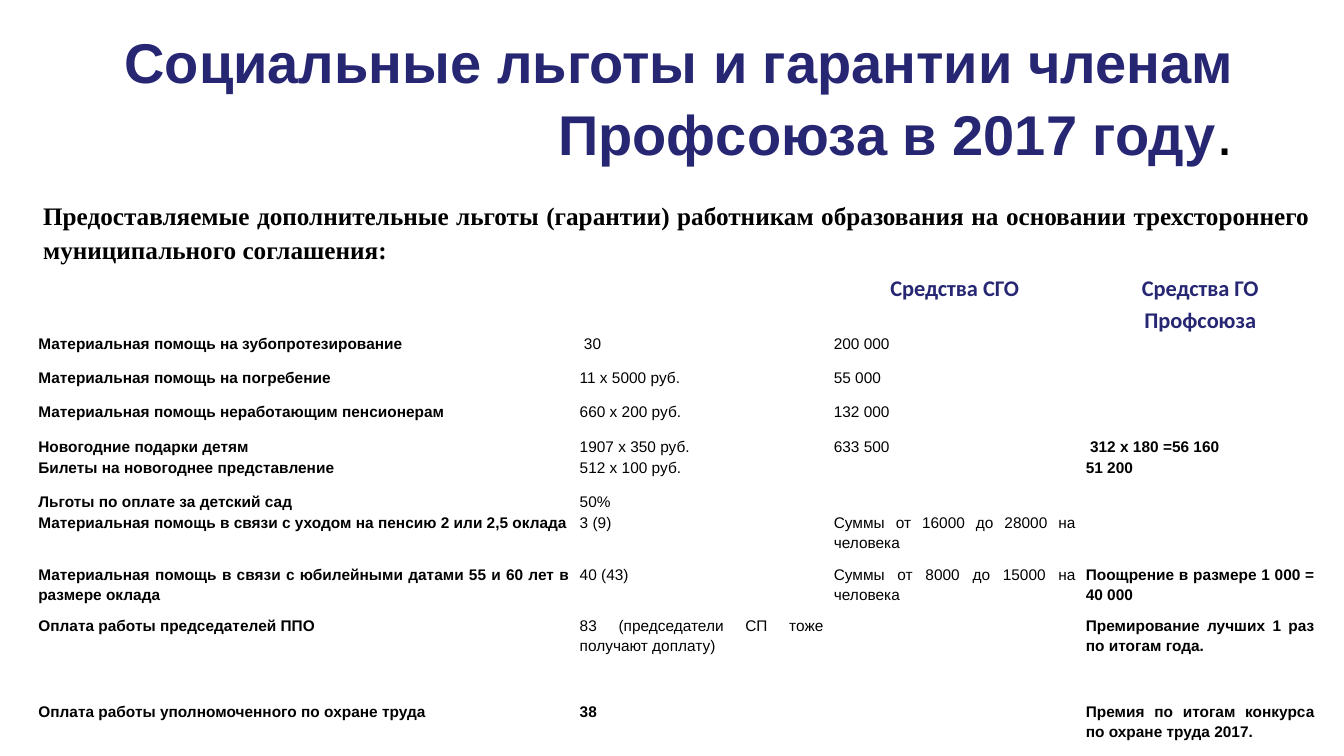
from dataclasses import dataclass

import pptx
import pptx.dml.color
import pptx.enum.text
import pptx.oxml
import pptx.oxml.ns
import pptx.slide
import pptx.table
import pptx.text.text
import pptx.util

Inches = pptx.util.Inches
Align = pptx.enum.text.PP_ALIGN
NAVY, BLACK, WHITE = "262673", "000000", "FFFFFF"


@dataclass(frozen=True)
class Style:
    size: float
    font: str
    color: str
    bold: bool


@dataclass(frozen=True)
class Benefit:
    height: float
    name: str
    amount: str = ""
    city_funds: str = ""
    union_funds: str = ""

    def texts(self) -> tuple[str, ...]:
        return self.name, self.amount, self.city_funds, self.union_funds


TITLE = Style(40, "Arial", NAVY, True)
TITLE_STOP = Style(44, "Arial", BLACK, False)
INTRO = Style(18, "Times New Roman", BLACK, True)
HEADING = Style(16, "Calibri", NAVY, True)
BOLD = Style(11, "Arial", BLACK, True)
PLAIN = Style(11, "Arial", BLACK, False)

COLUMN_WIDTHS = (5.37, 2.52, 2.5, 2.37)
BENEFITS = (
    Benefit(0.34, "", "", "Средства СГО", "Средства ГО Профсоюза"),
    Benefit(0.34, "Материальная помощь на зубопротезирование", " 30", "200 000"),
    Benefit(0.34, "Материальная помощь на погребение", "11 х 5000 руб.", "55 000"),
    Benefit(0.34, "Материальная помощь неработающим пенсионерам",
            "660 х 200 руб.", "132 000"),
    Benefit(0.2, "Новогодние подарки детям", "1907 х 350 руб.", "633 500",
            " 312 х 180 =56 160"),
    Benefit(0.34, "Билеты на новогоднее представление", "512 х 100 руб.", "", "51 200"),
    Benefit(0.2, "Льготы по оплате за детский сад", "50%"),
    Benefit(0.51, "Материальная помощь в связи с уходом на пенсию 2 или 2,5 оклада",
            "3 (9)", "Суммы от 16000 до 28000 на человека"),
    Benefit(0.51, "Материальная помощь в связи с юбилейными датами 55 и 60 лет "
            "в размере оклада", "40 (43)", "Суммы от 8000 до 15000 на человека",
            "Поощрение в размере 1 000 = 40 000"),
    Benefit(0.85, "Оплата работы председателей ППО",
            "83 (председатели СП тоже получают доплату)", "",
            "Премирование лучших 1 раз по итогам года."),
    Benefit(0.85, "Оплата работы уполномоченного по охране труда", "38", "",
            "Премия по итогам конкурса по охране труда 2017."),
)
LAST_ROW = len(BENEFITS) - 1


def rgb(color: str) -> pptx.dml.color.RGBColor:
    return pptx.dml.color.RGBColor.from_string(color)


def apply_style(font: pptx.text.text.Font, style: Style) -> None:
    font.size = pptx.util.Pt(style.size)
    font.name = style.font
    font.bold = style.bold
    font.color.rgb = rgb(style.color)


def add_text(slide: pptx.slide.Slide, left: float, top: float, width: float,
             height: float, text: str, style: Style,
             align: Align) -> pptx.text.text._Paragraph:
    box = slide.shapes.add_textbox(
        Inches(left), Inches(top), Inches(width), Inches(height))
    box.text_frame.word_wrap = True
    paragraph = box.text_frame.paragraphs[0]
    paragraph.text = text
    paragraph.alignment = align
    apply_style(paragraph.runs[0].font, style)
    return paragraph


def add_edges(cell: pptx.table._Cell) -> None:
    properties = cell._tc.get_or_add_tcPr()
    for edge in ("lnT", "lnB"):
        properties.append(pptx.oxml.parse_xml(
            f'<a:{edge} {pptx.oxml.ns.nsdecls("a")} w="12700"><a:solidFill>'
            f'<a:srgbClr val="{WHITE}"/></a:solidFill></a:{edge}>'))


def fill_cell(cell: pptx.table._Cell, tinted: bool) -> None:
    if not tinted:
        cell.fill.background()
        return
    cell.fill.solid()
    cell.fill.fore_color.rgb = rgb(WHITE)
    tint = cell._tc.tcPr.find(".//" + pptx.oxml.ns.qn("a:srgbClr"))
    tint.append(pptx.oxml.parse_xml(
        f'<a:alpha {pptx.oxml.ns.nsdecls("a")} val="20000"/>'))


def cell_style(row: int, column: int) -> Style:
    if row == 0:
        return HEADING
    return BOLD if column in (0, 3) or row == LAST_ROW else PLAIN


def write_cell(cell: pptx.table._Cell, text: str, row: int, column: int) -> None:
    cell.margin_left = cell.margin_right = Inches(0.05)
    cell.margin_top = cell.margin_bottom = 0
    paragraph = cell.text_frame.paragraphs[0]
    paragraph.text = text
    paragraph.alignment = Align.CENTER if row == 0 else Align.JUSTIFY
    paragraph.line_spacing = 1.15
    style = cell_style(row, column)
    apply_style(paragraph.font, style)
    for run in paragraph.runs:
        apply_style(run.font, style)
    outer = row in (0, LAST_ROW)
    if outer:
        add_edges(cell)
    fill_cell(cell, not outer and (row % 2 == 1 or column % 2 == 1))


def add_benefits(slide: pptx.slide.Slide) -> None:
    table = slide.shapes.add_table(
        len(BENEFITS), len(COLUMN_WIDTHS), Inches(0.33), Inches(2.69),
        Inches(sum(COLUMN_WIDTHS)),
        Inches(sum(benefit.height for benefit in BENEFITS))).table
    table.first_row = table.horz_banding = False
    for column, width in enumerate(COLUMN_WIDTHS):
        table.columns[column].width = Inches(width)
    for row, benefit in enumerate(BENEFITS):
        table.rows[row].height = Inches(benefit.height)
        for column, text in enumerate(benefit.texts()):
            write_cell(table.cell(row, column), text, row, column)


def main() -> None:
    presentation = pptx.Presentation()
    presentation.slide_width = Inches(13.33)
    presentation.slide_height = Inches(7.5)
    slide = presentation.slides.add_slide(presentation.slide_layouts[6])
    title = add_text(slide, 0.33, 0.22, 12, 1.25,
                     "Социальные льготы и гарантии членам Профсоюза в 2017 году",
                     TITLE, Align.RIGHT)
    title_stop = title.add_run()
    title_stop.text = "."
    apply_style(title_stop.font, TITLE_STOP)
    intro = add_text(slide, 0.33, 1.89, 12.76, 0.8,
                     "Предоставляемые дополнительные льготы (гарантии) работникам "
                     "образования на основании трехстороннего муниципального "
                     "соглашения:", INTRO, Align.JUSTIFY)
    intro.line_spacing = 1.15
    add_benefits(slide)
    presentation.save("out.pptx")


if __name__ == "__main__":
    main()
